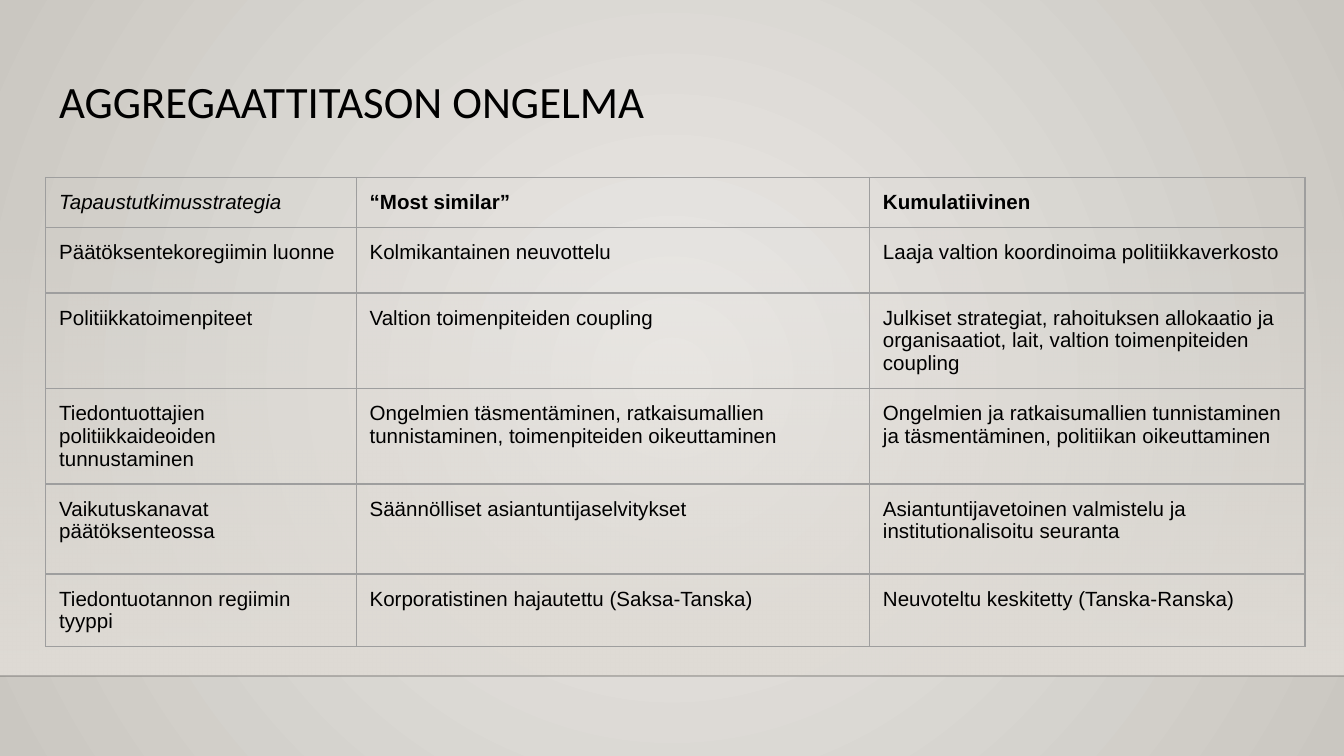
from lxml.etree import SubElement
from pptx import Presentation
from pptx.dml.color import RGBColor
from pptx.enum.shapes import MSO_CONNECTOR, MSO_SHAPE
from pptx.enum.text import MSO_ANCHOR, PP_ALIGN
from pptx.oxml import parse_xml
from pptx.oxml.ns import nsdecls, qn
from pptx.util import Inches, Pt

BLACK = RGBColor(0x00, 0x00, 0x00)
FLOOR_LINE = RGBColor(0x00, 0x00, 0x01)
BORDER = RGBColor(0x9E, 0x9E, 0x9E)
GLOW = RGBColor(0xEC, 0xEA, 0xE7)
EDGE = RGBColor(0xCA, 0xC7, 0xC1)
WALL = RGBColor(0xDF, 0xDB, 0xD5)

COLUMN_WIDTHS = [2.31, 3.82, 3.24]
ROW_HEIGHTS = [0.32, 0.49, 0.67, 0.67, 0.67, 0.49]
ROWS = [
    ("Tapaustutkimusstrategia", "“Most similar”", "Kumulatiivinen"),
    ("Päätöksentekoregiimin luonne", "Kolmikantainen neuvottelu",
     "Laaja valtion koordinoima politiikkaverkosto"),
    ("Politiikkatoimenpiteet", "Valtion toimenpiteiden coupling",
     "Julkiset strategiat, rahoituksen allokaatio ja organisaatiot, lait, "
     "valtion toimenpiteiden coupling"),
    ("Tiedontuottajien politiikkaideoiden tunnustaminen",
     "Ongelmien täsmentäminen, ratkaisumallien tunnistaminen, "
     "toimenpiteiden oikeuttaminen",
     "Ongelmien ja ratkaisumallien tunnistaminen ja täsmentäminen, "
     "politiikan oikeuttaminen"),
    ("Vaikutuskanavat päätöksenteossa", "Säännölliset asiantuntijaselvitykset",
     "Asiantuntijavetoinen valmistelu ja institutionalisoitu seuranta"),
    ("Tiedontuotannon regiimin tyyppi",
     "Korporatistinen hajautettu (Saksa-Tanska)",
     "Neuvoteltu keskitetty (Tanska-Ranska)"),
]


def set_gradient(fill, start, end):
    fill.gradient()
    for stop, color, position in zip(fill.gradient_stops, (start, end), (0, 1)):
        stop.color.rgb = color
        stop.position = position


def set_alpha(element, percent):
    """Give the first RGB colour inside element an opacity."""
    color = next(element.iter(qn("a:srgbClr")))
    SubElement(color, qn("a:alpha")).set("val", str(percent * 1000))


prs = Presentation()
prs.slide_width = Inches(10)
prs.slide_height = Inches(10) * 9 // 16
slide = prs.slides.add_slide(prs.slide_layouts[5])

# Background: a glow from the centre
set_gradient(slide.background.fill, GLOW, EDGE)
direction = next(slide.element.iter(qn("a:lin")))
direction.getparent().replace(direction, parse_xml(
    f'<a:path {nsdecls("a")} path="circle">'
    '<a:fillToRect l="50000" t="50000" r="50000" b="50000"/></a:path>'))

# Wall fading in towards the floor line
wall = slide.shapes.add_shape(
    MSO_SHAPE.RECTANGLE, 0, Inches(1.66), Inches(10), Inches(3.37))
wall.shadow.inherit = False
wall.line.fill.background()
set_gradient(wall.fill, WALL, WALL)
wall.fill.gradient_angle = 270
set_alpha(wall.element.spPr, 0)

floor = slide.shapes.add_connector(
    MSO_CONNECTOR.STRAIGHT, 0, Inches(5.03), Inches(10), Inches(5.03))
floor.line.color.rgb = FLOOR_LINE
floor.line.width = Pt(1)
set_alpha(floor.element.spPr, 20)
SubElement(floor.element.spPr, qn("a:effectLst"))

title = slide.shapes.title
title.left, title.top = Inches(0.34), Inches(0.49)
title.width, title.height = Inches(9.32), Inches(0.63)
heading = title.text_frame
heading.text = "AGGREGAATTITASON ONGELMA"
heading.vertical_anchor = MSO_ANCHOR.TOP
heading.margin_left = heading.margin_right = Inches(0.1)
heading.margin_top = heading.margin_bottom = Inches(0.1)
heading.paragraphs[0].alignment = PP_ALIGN.LEFT
heading.paragraphs[0].line_spacing = 0.9
heading_font = heading.paragraphs[0].runs[0].font
heading_font.name = "Calibri"
heading_font.size = Pt(24)
heading_font.color.rgb = BLACK

comparison = slide.shapes.add_table(
    len(ROWS), len(COLUMN_WIDTHS), Inches(0.34), Inches(1.32),
    Inches(sum(COLUMN_WIDTHS)), Inches(sum(ROW_HEIGHTS))).table
comparison.first_row = False
comparison.horz_banding = False
for column, width in zip(comparison.columns, COLUMN_WIDTHS):
    column.width = Inches(width)
for row, height in zip(comparison.rows, ROW_HEIGHTS):
    row.height = Inches(height)

for r, texts in enumerate(ROWS):
    for c, text in enumerate(texts):
        cell = comparison.cell(r, c)
        cell.margin_left = cell.margin_right = Inches(0.1)
        cell.margin_top = cell.margin_bottom = Inches(0.1)
        cell.text_frame.text = text
        font = cell.text_frame.paragraphs[0].runs[0].font
        font.name = "Arial"
        font.size = Pt(11)
        font.color.rgb = BLACK
        font.bold = r == 0 and c > 0
        font.italic = r == 0 and c == 0
        # Borders come before the fill in the cell properties
        properties = cell._tc.get_or_add_tcPr()
        for side in ("lnL", "lnR", "lnT", "lnB"):
            properties.append(parse_xml(
                f'<a:{side} {nsdecls("a")} w="{Pt(0.75)}"><a:solidFill>'
                f'<a:srgbClr val="{BORDER}"/></a:solidFill></a:{side}>'))
        cell.fill.background()

prs.save("out.pptx")
